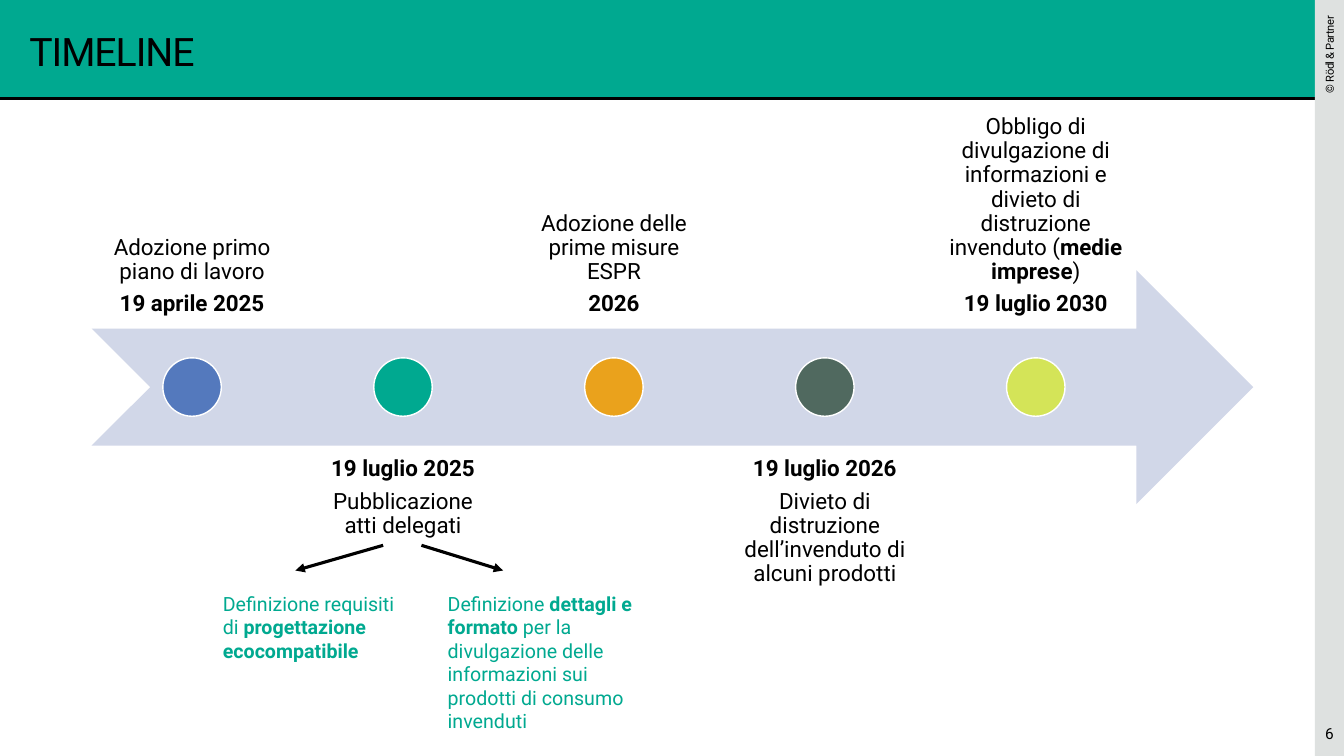
import pptx
import pptx.dml.color
import pptx.enum.shapes
import pptx.enum.text
import pptx.oxml
import pptx.oxml.ns
import pptx.util

Inches, Pt = pptx.util.Inches, pptx.util.Pt
KIND = pptx.enum.shapes.MSO_SHAPE
ALIGN = pptx.enum.text.PP_ALIGN
ANCHOR = pptx.enum.text.MSO_ANCHOR

FONT, BLACK, WHITE, GREEN = "Roboto", "000000", "FFFFFF", "00A990"
SIDE = 0.29  # width of the grey strip
BAND = 0.98  # height of the title band

# Steps alternate above and below the arrow; *stars* mark bold text
STEPS = [
    ("5479BD", "19 aprile 2025", "Adozione primo piano di lavoro"),
    (GREEN, "19 luglio 2025", "Pubblicazione atti delegati"),
    ("EAA21C", "2026", "Adozione delle prime misure ESPR"),
    ("50695F", "19 luglio 2026",
     "Divieto di distruzione dell’invenduto di alcuni prodotti"),
    ("D4E458", "19 luglio 2030",
     "Obbligo di divulgazione di informazioni e divieto di distruzione "
     "invenduto (*medie imprese*)"),
]
NOTES = [
    (2.21, 0.71, "Definizione requisiti di *progettazione ecocompatibile*"),
    (4.44, 1.41, "Definizione *dettagli e formato* per la divulgazione delle "
                 "informazioni sui prodotti di consumo invenduti"),
]
ARROWS = [(3.8, 2.93), (4.18, 4.99)]


def tint(code):
    return pptx.dml.color.RGBColor.from_string(code)


def put(item, form):
    for name, value in form.items():
        setattr(item, name, value)


def place(item, box):
    put(item, dict(zip(("left", "top", "width", "height"), map(Inches, box))))


def write(item, lines, size, color=BLACK, align=ALIGN.LEFT,
          anchor=ANCHOR.TOP, inset=0, wrap=True, space=0, para=None):
    """Fill a shape with text, one paragraph a line, bold between stars."""
    frame = item.text_frame
    put(frame, {"word_wrap": wrap, "vertical_anchor": anchor,
                "auto_size": pptx.enum.text.MSO_AUTO_SIZE.NONE})
    for side in ("left", "top", "right", "bottom"):
        setattr(frame, "margin_" + side, Inches(inset))
    for row, line in enumerate(lines):
        part = frame.add_paragraph() if row else frame.paragraphs[0]
        part.alignment = align
        put(part, para or {})
        if row:
            part.space_before = Pt(5.6)
        for turn, text in enumerate(line.split("*")):
            if not text:
                continue
            run = part.add_run()
            run.text = text
            put(run.font, {"name": FONT, "size": Pt(size),
                           "bold": turn % 2 == 1})
            run.font.color.rgb = tint(color)
            if space:
                run._r.get_or_add_rPr().set("spc", str(space))


def label(slide, box, lines, size, **form):
    item = slide.shapes.add_textbox(*map(Inches, box))
    write(item, lines, size, **form)
    return item


def shape(slide, kind, box, fill, edge=None):
    item = slide.shapes.add_shape(kind, *map(Inches, box))
    item.shadow.inherit = False
    item.fill.solid()
    item.fill.fore_color.rgb = tint(fill)
    if edge:
        item.line.color.rgb = tint(edge)
        item.line.width = Pt(1)
    else:
        item.line.fill.background()


def line(slide, start, end, head=False):
    item = slide.shapes.add_connector(
        pptx.enum.shapes.MSO_CONNECTOR.STRAIGHT, *map(Inches, start + end))
    item.line.color.rgb = tint(BLACK)
    item.line.width = Pt(2.25)
    props = item._element.spPr
    if head:
        stroke = props.find(pptx.oxml.ns.qn("a:ln"))
        stroke.append(pptx.oxml.parse_xml(
            '<a:tailEnd %s type="triangle"/>' % pptx.oxml.ns.nsdecls("a")))
    props.append(pptx.oxml.parse_xml(
        "<a:effectLst %s/>" % pptx.oxml.ns.nsdecls("a")))


def header(slide, box):
    """Green band with the title and a rule below."""
    left, top, width, height = box
    shape(slide, KIND.RECTANGLE, box, GREEN)
    line(slide, (left, top + height), (left + width, top + height))
    title = slide.shapes.title
    place(title, (left + 0.29, top + 0.29, 12.52, 0.43))
    write(title, ["TIMELINE"], 28, anchor=ANCHOR.MIDDLE, space=-70)
    slide.shapes._spTree.append(title._element)  # bring above the band


def strip(slide, box):
    """Grey side strip with the copyright line and page number."""
    left, top, width, height = box
    shape(slide, KIND.RECTANGLE, box, "DEE1E0")
    long = 0.99
    note = label(slide, (left + (width - long) / 2, top + 0.35, long, width),
                 ["© Rödl & Partner"], 8, align=ALIGN.RIGHT,
                 anchor=ANCHOR.MIDDLE, wrap=False, space=-30)
    put(note, {"rotation": 270})
    note.text_frame.margin_right = Inches(0.16)
    label(slide, (left, top + height - 0.44, width, 0.44), ["6"], 11,
          align=ALIGN.CENTER, anchor=ANCHOR.MIDDLE)


def timeline(slide, box):
    """Wide arrow with a dot, date and text for each step."""
    left, top, width, height = box
    shape(slide, KIND.NOTCHED_RIGHT_ARROW, box, "D1D7E8")
    wide, pitch, dot = 1.99, 2.092, 0.58
    for step, (color, date, text) in enumerate(STEPS):
        x = left + step * pitch
        above = step % 2 == 0
        lines = [text, f"*{date}*"] if above else [f"*{date}*", text]
        y = top + (-0.75 if above else 0.75) * height
        label(slide, (x, y, wide, height), lines, 16, align=ALIGN.CENTER,
              anchor=ANCHOR.BOTTOM if above else ANCHOR.TOP,
              inset=0.12, para={"line_spacing": 0.9})
        shape(slide, KIND.OVAL, (x + (wide - dot) / 2,
              top + (height - dot) / 2, dot, dot), color, WHITE)


def detail(slide, top):
    """Two arrows leading to the green notes."""
    for start, end in ARROWS:
        line(slide, (start, top), (end, top + 0.25), head=True)
    for left, height, text in NOTES:
        label(slide, (left, top + 0.46, 1.85, height), [text], 14, color=GREEN)


def main():
    deck = pptx.Presentation()
    wide, high = 13.33, 7.5
    put(deck, {"slide_width": Inches(wide), "slide_height": Inches(high)})
    slide = deck.slides.add_slide(deck.slide_layouts[5])
    header(slide, (0, 0, wide, BAND))
    strip(slide, (wide - SIDE, 0, SIDE, high))
    timeline(slide, (0.91, 2.68, 11.52, 2.32))
    detail(slide, 5.41)
    deck.save("out.pptx")


if __name__ == "__main__":
    main()
